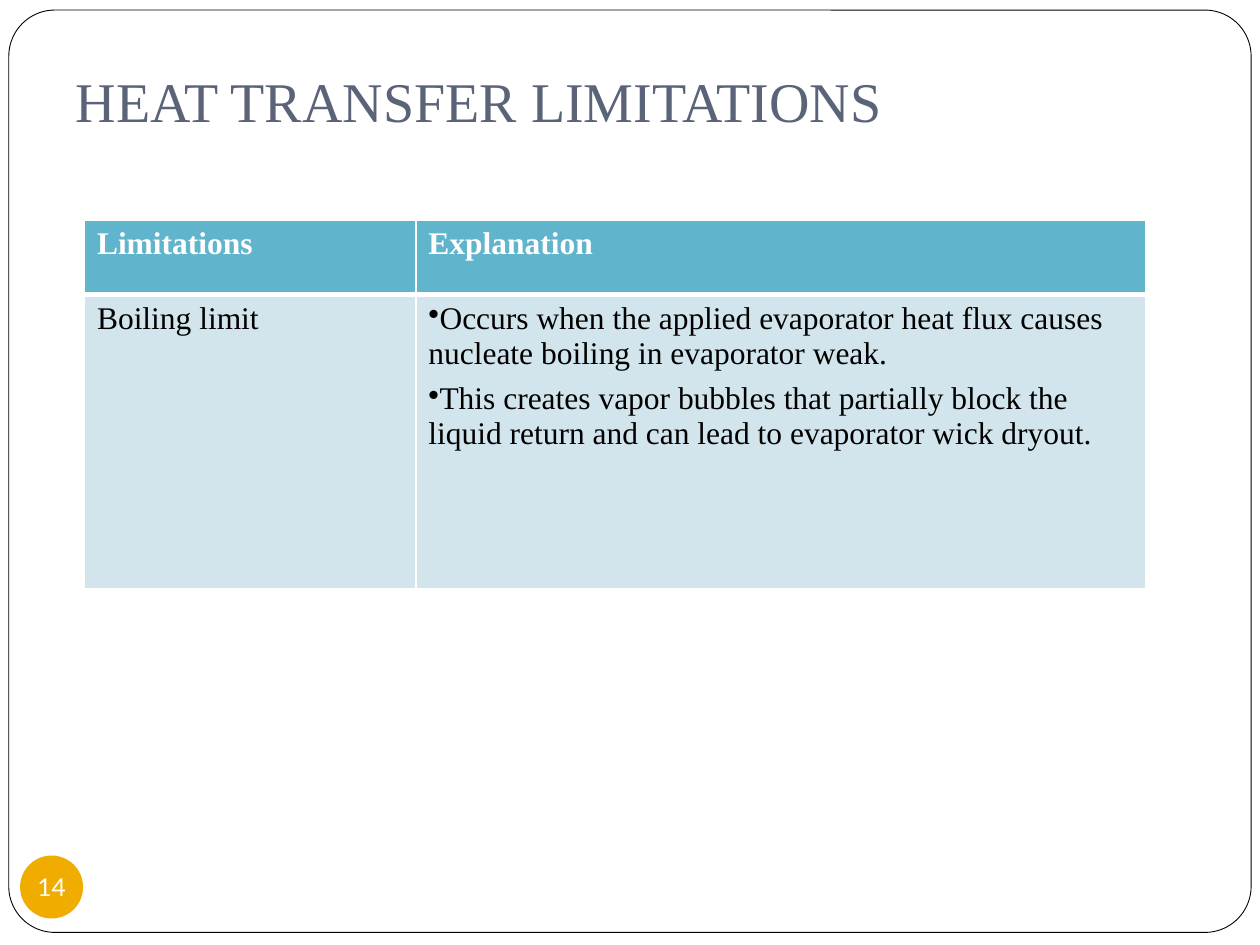
"""Build the heat transfer limitations slide."""
import pptx
import pptx.dml.color
import pptx.enum.shapes
import pptx.enum.text
import pptx.oxml
import pptx.oxml.ns
import pptx.util

Inches = pptx.util.Inches
Pt = pptx.util.Pt
RGBColor = pptx.dml.color.RGBColor
Shape = pptx.enum.shapes.MSO_SHAPE
Align = pptx.enum.text.PP_ALIGN
Anchor = pptx.enum.text.MSO_ANCHOR

WHITE = RGBColor(0xFF, 0xFF, 0xFF)
BLACK = RGBColor(0x00, 0x00, 0x00)
SLATE = RGBColor(0x5A, 0x63, 0x78)
GOLD = RGBColor(0xF0, 0xAD, 0x00)
TEAL = RGBColor(0x60, 0xB5, 0xCC)
PALE = RGBColor(0xD2, 0xE5, 0xEC)
SERIF = "Times New Roman"


def style(para, color, **form):
    for name, value in form.items():
        setattr(para.font, name, value)
    para.font.color.rgb = color


def edge(cell, side, width):
    props = cell._tc.get_or_add_tcPr()
    props.append(pptx.oxml.parse_xml(
        f'<a:ln{side} {pptx.oxml.ns.nsdecls("a")} w="{Pt(width)}">'
        f'<a:solidFill><a:srgbClr val="{WHITE}"/></a:solidFill></a:ln{side}>'))


deck = pptx.Presentation()
deck.slide_width, deck.slide_height = Inches(10), Inches(7.5)
slide = deck.slides.add_slide(deck.slide_layouts[5])

title = slide.shapes.title
place = {"left": 0.5, "top": 0.33, "width": 9, "height": 0.83}
for name, value in place.items():
    setattr(title, name, Inches(value))
frame = title.text_frame
frame.text = "HEAT TRANSFER LIMITATIONS"
form = {"auto_size": pptx.enum.text.MSO_AUTO_SIZE.NONE, "word_wrap": True,
        "vertical_anchor": Anchor.BOTTOM, "margin_bottom": Inches(0.1)}
for name, value in form.items():
    setattr(frame, name, value)
frame.paragraphs[0].alignment = Align.LEFT
style(frame.paragraphs[0], SLATE, name=SERIF, size=Pt(32))

border = slide.shapes.add_shape(
    Shape.ROUNDED_RECTANGLE, Inches(0.07), Inches(0.08), Inches(9.86), Inches(7.32))
border.adjustments[0] = 0.05
border.shadow.inherit = False
border.fill.solid()
border.fill.fore_color.rgb = WHITE
border.line.color.rgb = BLACK
border.line.width = Pt(0.5)
title.element.addprevious(border.element)

badge = slide.shapes.add_shape(
    Shape.OVAL, Inches(0.16), Inches(6.79), Inches(0.5), Inches(0.5))
badge.shadow.inherit = False
badge.fill.solid()
badge.fill.fore_color.rgb = GOLD
badge.line.fill.background()
label = badge.text_frame
label.text = "14"
form = {"word_wrap": False, "vertical_anchor": Anchor.MIDDLE, "margin_left": 0,
        "margin_top": 0, "margin_right": 0, "margin_bottom": 0}
for name, value in form.items():
    setattr(label, name, value)
label.paragraphs[0].alignment = Align.CENTER
style(label.paragraphs[0], WHITE, name="Lato", size=Pt(14))

rows = [
    ["Limitations", "Explanation"],
    ["Boiling limit",
     "Occurs when the applied evaporator heat flux causes nucleate boiling "
     "in evaporator weak.\n"
     "This creates vapor bubbles that partially block the liquid return "
     "and can lead to evaporator wick dryout."],
]
table = slide.shapes.add_table(
    2, 2, Inches(0.67), Inches(1.75), Inches(8.42), Inches(2.92)).table
for col, width in zip(table.columns, [2.63, 5.79]):
    col.width = Inches(width)
for row, height in zip(table.rows, [0.59, 2.33]):
    row.height = Inches(height)

looks = [(TEAL, WHITE, True, 3), (PALE, BLACK, False, 1)]
for i, (fill, ink, bold, base) in enumerate(looks):
    for j, text in enumerate(rows[i]):
        cell = table.cell(i, j)
        for side, width in {"L": 1, "R": 1, "T": 1, "B": base}.items():
            edge(cell, side, width)
        cell.fill.solid()
        cell.fill.fore_color.rgb = fill
        cell.text = text
        for para in cell.text_frame.paragraphs:
            style(para, ink, name=SERIF, size=Pt(18), bold=bold)

for para in table.cell(1, 1).text_frame.paragraphs:
    para.space_after = Pt(6)
    props = para._p.get_or_add_pPr()
    props.set("marL", "0")
    props.set("indent", "0")
    mark = pptx.oxml.parse_xml(
        f'<a:buChar {pptx.oxml.ns.nsdecls("a")} char="•"/>')
    props.find(pptx.oxml.ns.qn("a:spcAft")).addnext(mark)

deck.save("out.pptx")
